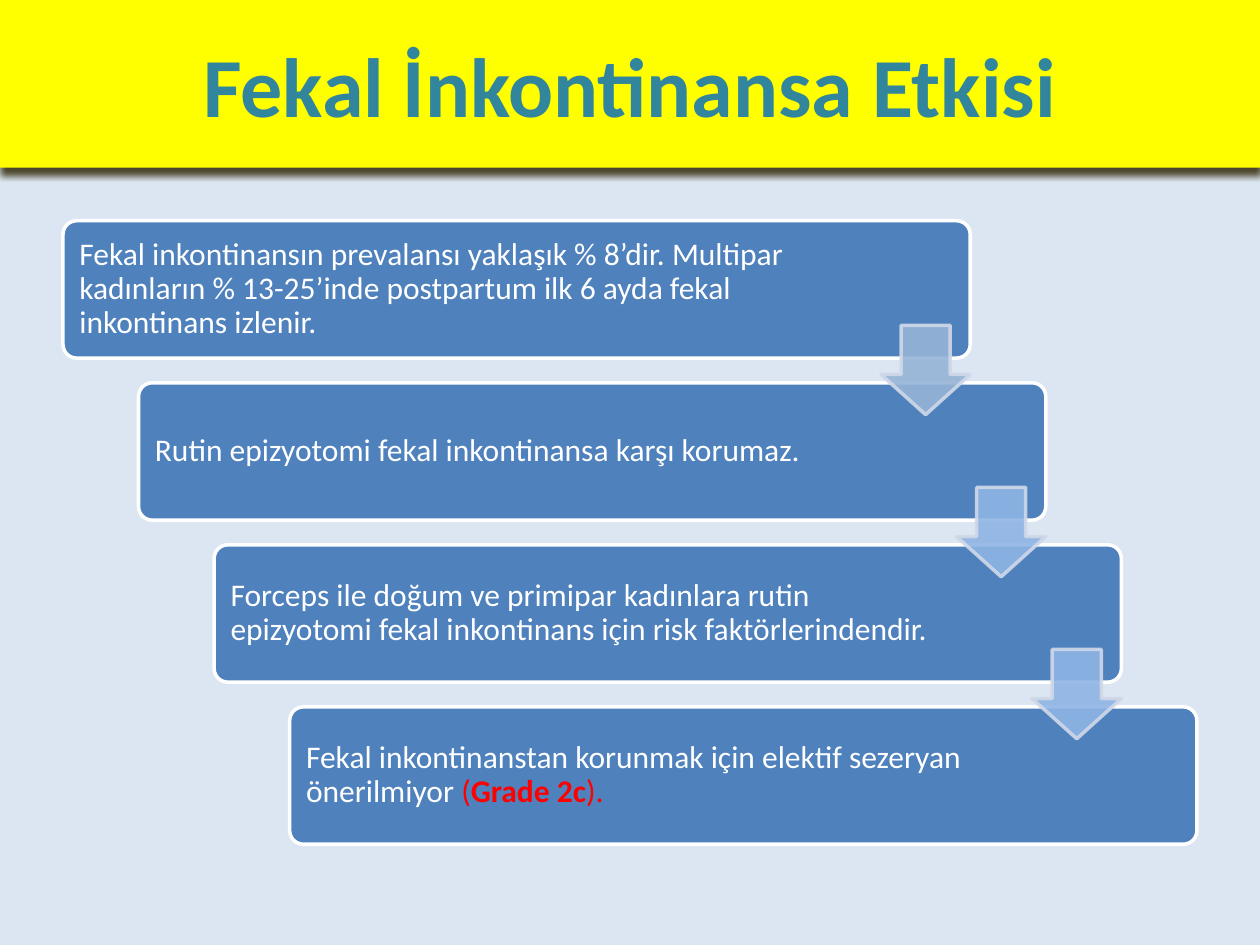
from lxml.etree import SubElement
from pptx import Presentation
from pptx.dml.color import RGBColor
from pptx.enum.shapes import MSO_SHAPE as Shape
from pptx.enum.text import MSO_ANCHOR as Anchor, MSO_AUTO_SIZE as AutoSize, PP_ALIGN as Align
from pptx.oxml.ns import qn
from pptx.util import Cm, Pt

COLORS = {
    "background": "DCE6F2", "banner": "FFFF00", "title": "31859C", "shadow": "4A452A",
    "step": "4F81BD", "white": "FFFFFF", "grade": "FF0000",
    "first_arrow": "95B3D7", "arrow": "8EB4E3", "arrow_line": "D0D8E8",
}
FONT = "Calibri"
STEPS = [
    [("Fekal inkontinansın prevalansı yaklaşık % 8’dir. Multipar kadınların % 13-25’inde "
      "postpartum ilk 6 ayda fekal inkontinans izlenir.", "white", False)],
    [("Rutin epizyotomi fekal inkontinansa karşı korumaz.", "white", False)],
    [("Forceps ile doğum ve primipar kadınlara rutin epizyotomi fekal inkontinans için "
      "risk faktörlerindendir.", "white", False)],
    [("Fekal inkontinanstan korunmak için elektif sezeryan önerilmiyor ", "white", False),
     ("(", "grade", False), ("Grade 2c", "grade", True), (").", "grade", False)],
]
ARROW_COLORS = ["first_arrow", "arrow", "arrow"]


def rgb(name):
    """Return the named colour."""
    return RGBColor.from_string(COLORS[name])


def paint(shape, fill, line):
    """Give a shape a flat fill and a two-point outline."""
    shape.shadow.inherit = False
    shape.fill.solid()
    shape.fill.fore_color.rgb = rgb(fill)
    shape.line.color.rgb = rgb(line)
    shape.line.width = Pt(2)


def add_banner(slide, left, top, width, height):
    """Format the title placeholder as a banner with a drop shadow."""
    title = slide.shapes.title
    title.left, title.top, title.width, title.height = left, top, width, height
    title.fill.solid()
    title.fill.fore_color.rgb = rgb("banner")
    title.shadow.inherit = False
    effects = title._element.spPr.find(qn("a:effectLst"))
    shadow = SubElement(effects, qn("a:outerShdw"), blurRad=str(Pt(4)), dist=str(Pt(4)),
                        dir="5400000", algn="t", rotWithShape="0")
    SubElement(shadow, qn("a:srgbClr"), val=COLORS["shadow"])
    frame = title.text_frame
    frame.text = "Fekal İnkontinansa Etkisi"
    frame.auto_size = AutoSize.NONE
    frame.vertical_anchor = Anchor.MIDDLE
    paragraph = frame.paragraphs[0]
    paragraph.alignment = Align.CENTER
    font = paragraph.font
    font.name, font.size, font.bold = FONT, Pt(48), True
    font.color.rgb = rgb("title")


def add_step(slide, runs, left, top, width, height):
    """Add one rounded step box with its text."""
    box = slide.shapes.add_shape(Shape.ROUNDED_RECTANGLE, left, top, width, height)
    box.adjustments[0] = 0.1
    paint(box, "step", "white")
    frame = box.text_frame
    frame.word_wrap = True
    frame.vertical_anchor = Anchor.MIDDLE
    frame.margin_left, frame.margin_right = Cm(0.25), Cm(3.58)
    frame.margin_top = frame.margin_bottom = Cm(0.25)
    paragraph = frame.paragraphs[0]
    paragraph.alignment = Align.LEFT
    paragraph.line_spacing = 0.9
    paragraph.font.name, paragraph.font.size = FONT, Pt(18)
    for text, color, bold in runs:
        run = paragraph.add_run()
        run.text = text
        run.font.color.rgb = rgb(color)
        run.font.bold = bold


def add_arrow(slide, color, left, top, size):
    """Add a slightly transparent down arrow."""
    arrow = slide.shapes.add_shape(Shape.DOWN_ARROW, left, top, size, size)
    arrow.adjustments[0], arrow.adjustments[1] = 0.55, 0.45
    paint(arrow, color, "arrow_line")
    for element in arrow._element.spPr.iter(qn("a:srgbClr")):
        SubElement(element, qn("a:alpha"), val="90000")


def add_staircase(slide, left, top, width, height):
    """Place the steps down a diagonal, with arrows over the joints."""
    step_width, step_height, arrow_size = Cm(18.29), Cm(2.77), Cm(1.8)
    shift = (width - step_width) / (len(STEPS) - 1)
    drop = (height - step_height) / (len(STEPS) - 1)
    corners = [(int(left + i * shift), int(top + i * drop)) for i in range(len(STEPS))]
    for runs, (x, y) in zip(STEPS, corners):
        add_step(slide, runs, x, y, step_width, step_height)
    for color, (x, y) in zip(ARROW_COLORS, corners):
        add_arrow(slide, color, x + step_width - arrow_size, y + Cm(2.11), arrow_size)


def main():
    """Build and save the slide."""
    presentation = Presentation()
    presentation.slide_width, presentation.slide_height = Cm(25.4), Cm(19.05)
    slide = presentation.slides.add_slide(presentation.slide_layouts[5])
    slide.background.fill.solid()
    slide.background.fill.fore_color.rgb = rgb("background")
    add_banner(slide, Cm(0), Cm(0), presentation.slide_width, Cm(3.38))
    add_staircase(slide, Cm(1.27), Cm(4.45), Cm(22.86), Cm(12.57))
    presentation.save("out.pptx")


if __name__ == "__main__":
    main()
